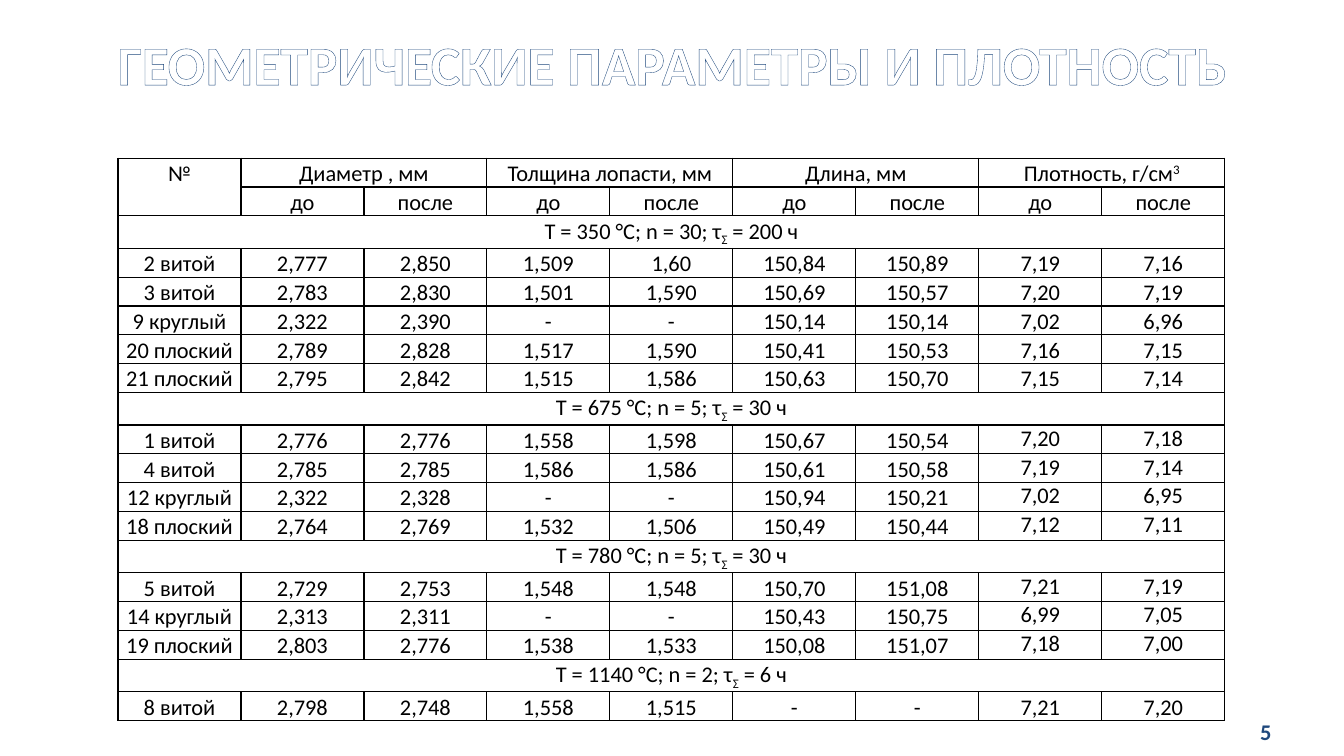
from lxml.etree import SubElement
from pptx import Presentation
from pptx.dml.color import RGBColor
from pptx.enum.text import MSO_ANCHOR, PP_ALIGN
from pptx.oxml import parse_xml
from pptx.oxml.ns import nsdecls, qn
from pptx.util import Inches, Pt

FONT = "Calibri"
COLORS = {"text": "000000", "border": "000000", "title": "FFFFFF", "accent": "1F497D"}
SUPERSCRIPT, SUBSCRIPT = 30000, -25000
COLUMNS = 9
ROW_HEIGHT = 0.2
QUANTITIES = [
    [("Диаметр , мм", 0)],
    [("Толщина лопасти, мм", 0)],
    [("Длина, мм", 0)],
    [("Плотность, г/см", 0), ("3", SUPERSCRIPT)],
]
# Regime, duration, tight density cells, samples
SECTIONS = [
    ("Т = 350 °С; n = 30; τ", " = 200 ч", False, [
        ("2 витой", "2,777 2,850 1,509 1,60 150,84 150,89 7,19 7,16"),
        ("3 витой", "2,783 2,830 1,501 1,590 150,69 150,57 7,20 7,19"),
        ("9 круглый", "2,322 2,390 - - 150,14 150,14 7,02 6,96"),
        ("20 плоский", "2,789 2,828 1,517 1,590 150,41 150,53 7,16 7,15"),
        ("21 плоский", "2,795 2,842 1,515 1,586 150,63 150,70 7,15 7,14"),
    ]),
    ("Т = 675 °С; n = 5; τ", " = 30 ч", True, [
        ("1 витой", "2,776 2,776 1,558 1,598 150,67 150,54 7,20 7,18"),
        ("4 витой", "2,785 2,785 1,586 1,586 150,61 150,58 7,19 7,14"),
        ("12 круглый", "2,322 2,328 - - 150,94 150,21 7,02 6,95"),
        ("18 плоский", "2,764 2,769 1,532 1,506 150,49 150,44 7,12 7,11"),
    ]),
    ("Т = 780 °С; n = 5; τ", " = 30 ч", True, [
        ("5 витой", "2,729 2,753 1,548 1,548 150,70 151,08 7,21 7,19"),
        ("14 круглый", "2,313 2,311 - - 150,43 150,75 6,99 7,05"),
        ("19 плоский", "2,803 2,776 1,538 1,533 150,08 151,07 7,18 7,00"),
    ]),
    ("Т = 1140 °С; n = 2; τ", " = 6 ч", False, [
        ("8 витой", "2,798 2,748 1,558 1,515 - - 7,21 7,20"),
    ]),
]


def place(shape, box):
    shape.left, shape.top, shape.width, shape.height = (Inches(length) for length in box)


def add_run(paragraph, text, size, color, bold=False, baseline=0):
    run = paragraph.add_run()
    run.text = text
    run.font.name = FONT
    run.font.size = Pt(size)
    run.font.bold = bold
    run.font.color.rgb = RGBColor.from_string(COLORS[color])
    if baseline:
        run._r.get_or_add_rPr().set("baseline", str(baseline))
    return run


def line_xml(tag, width, color):
    return parse_xml(
        f'<a:{tag} {nsdecls("a")} w="{Pt(width)}"><a:solidFill>'
        f'<a:srgbClr val="{COLORS[color]}"/></a:solidFill></a:{tag}>'
    )


def add_title(slide, box):
    title = slide.shapes.title
    place(title, box)
    frame = title.text_frame
    frame.word_wrap = True
    frame.vertical_anchor = MSO_ANCHOR.MIDDLE
    paragraph = frame.paragraphs[0]
    paragraph.alignment = PP_ALIGN.CENTER
    run = add_run(paragraph, "ГЕОМЕТРИЧЕСКИЕ ПАРАМЕТРЫ И ПЛОТНОСТЬ", 39.6, "title", bold=True)
    run._r.get_or_add_rPr().insert(0, line_xml("ln", 0.8, "accent"))


def add_slide_number(slide, box):
    shape = slide.shapes.add_textbox(*(Inches(length) for length in box))
    frame = shape.text_frame
    frame.word_wrap = True
    frame.vertical_anchor = MSO_ANCHOR.MIDDLE
    paragraph = frame.paragraphs[0]
    paragraph.alignment = PP_ALIGN.CENTER
    add_run(paragraph, "5", 16, "accent", bold=True)


def format_cell(cell):
    """Clear the fill, draw all four borders and set regular margins."""
    cell.fill.background()
    cell.margin_left = cell.margin_right = Inches(0.07)
    cell.margin_top = cell.margin_bottom = 0
    properties = cell._tc.get_or_add_tcPr()
    for index, tag in enumerate(("lnL", "lnR", "lnT", "lnB")):
        properties.insert(index, line_xml(tag, 1, "border"))


def write_cell(cell, parts, tight=False):
    """Write (text, baseline) parts; tight cells have narrow margins and single spacing."""
    paragraph = cell.text_frame.paragraphs[0]
    paragraph.alignment = PP_ALIGN.CENTER
    if tight:
        cell.margin_left = cell.margin_right = Inches(0.01)
    else:
        paragraph.line_spacing = 1.07
    for text, baseline in parts:
        add_run(paragraph, text, 16, "text", baseline=baseline)


def write_header(table):
    table.cell(0, 0).merge(table.cell(1, 0))
    write_cell(table.cell(0, 0), [("№", 0)])
    for index, parts in enumerate(QUANTITIES):
        column = 1 + 2 * index
        table.cell(0, column).merge(table.cell(0, column + 1))
        write_cell(table.cell(0, column), parts)
        for offset, label in enumerate(("до", "после")):
            write_cell(table.cell(1, column + offset), [(label, 0)])


def write_section(table, row, section):
    """Write one regime with its samples and return the next free row."""
    regime, duration, tight_density, samples = section
    table.cell(row, 0).merge(table.cell(row, COLUMNS - 1))
    write_cell(table.cell(row, 0), [(regime, 0), ("Σ", SUBSCRIPT), (duration, 0)])
    for row, (sample, values) in enumerate(samples, row + 1):
        for column, text in enumerate([sample, *values.split()]):
            tight = tight_density and column >= COLUMNS - 2
            write_cell(table.cell(row, column), [(text, 0)], tight)
    return row + 1


def add_measurements(slide, left, top, width):
    row_count = 2 + sum(1 + len(section[3]) for section in SECTIONS)
    table = slide.shapes.add_table(
        row_count, COLUMNS, Inches(left), Inches(top),
        Inches(width), Inches(ROW_HEIGHT * row_count),
    ).table
    table.first_row = table.horz_banding = False
    for cell in table.iter_cells():
        format_cell(cell)
        end = SubElement(cell.text_frame.paragraphs[0]._p, qn("a:endParaRPr"))
        end.set("sz", "1600")
    write_header(table)
    row = 2
    for section in SECTIONS:
        row = write_section(table, row, section)


def main():
    presentation = Presentation()
    presentation.slide_width = Inches(13.33)
    presentation.slide_height = Inches(7.5)
    slide = presentation.slides.add_slide(presentation.slide_layouts[5])
    add_title(slide, (0.67, 0, 12, 1.25))
    add_slide_number(slide, (12.23, 7.06, 0.65, 0.4))
    add_measurements(slide, 1.17, 1.57, 10.98)
    presentation.save("out.pptx")


if __name__ == "__main__":
    main()
